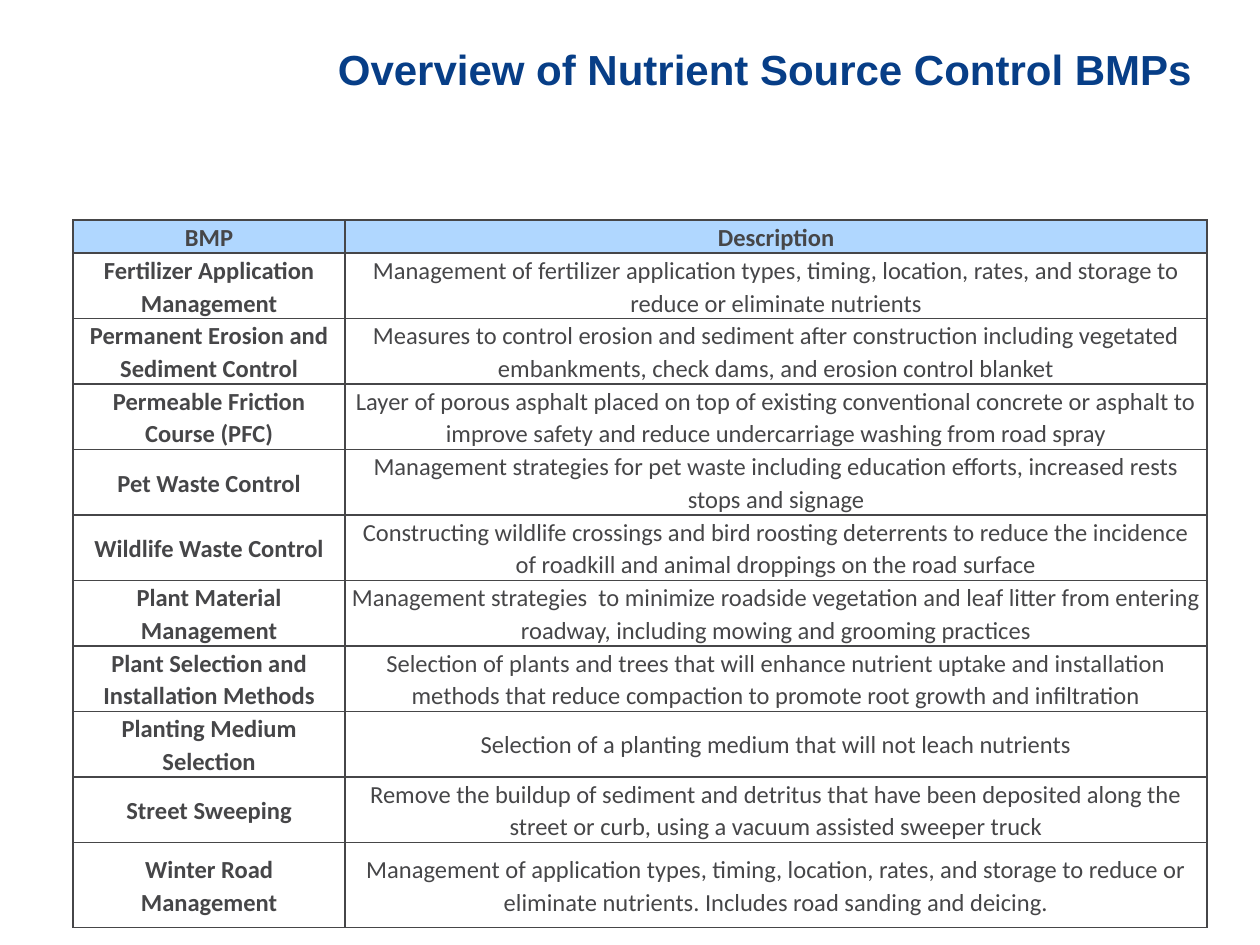
from lxml.etree import SubElement
from pptx import Presentation
from pptx.dml.color import RGBColor as RGB
from pptx.enum.text import MSO_ANCHOR as ANCHOR, PP_ALIGN as ALIGN
from pptx.oxml.ns import qn
from pptx.util import Inches, Pt

COLORS = {"title": "073E87", "text": "464648", "header": "B0D7FF", "border": "464648"}
WIDTH, HEIGHT = Inches(10), Inches(7.5)
INSET = Inches(0.04)
LINE = Inches(0.26)  # height of one line of table text
COLUMN_SHARES = (0.24, 0.76)
HEADER = ("BMP", "Description")
BMPS = [
    ("Fertilizer Application Management",
     "Management of fertilizer application types, timing, location, rates, and storage to "
     "reduce or eliminate nutrients"),
    ("Permanent Erosion and Sediment Control",
     "Measures to control erosion and sediment after construction including vegetated "
     "embankments, check dams, and erosion control blanket"),
    ("Permeable Friction Course (PFC)",
     "Layer of porous asphalt placed on top of existing conventional concrete or asphalt to "
     "improve safety and reduce undercarriage washing from road spray"),
    ("Pet Waste Control",
     "Management strategies for pet waste including education efforts, increased rests "
     "stops and signage"),
    ("Wildlife Waste Control",
     "Constructing wildlife crossings and bird roosting deterrents to reduce the incidence "
     "of roadkill and animal droppings on the road surface"),
    ("Plant Material Management",
     "Management strategies  to minimize roadside vegetation and leaf litter from entering "
     "roadway, including mowing and grooming practices"),
    ("Plant Selection and Installation Methods",
     "Selection of plants and trees that will enhance nutrient uptake and installation "
     "methods that reduce compaction to promote root growth and infiltration"),
    ("Planting Medium Selection",
     "Selection of a planting medium that will not leach nutrients"),
    ("Street Sweeping",
     "Remove the buildup of sediment and detritus that have been deposited along the "
     "street or curb, using a vacuum assisted sweeper truck"),
    ("Winter Road Management",
     "Management of application types, timing, location, rates, and storage to reduce or "
     "eliminate nutrients. Includes road sanding and deicing."),
]


def box(left, top, width, height):
    """Turn shares of the slide's size into lengths."""
    return int(left * WIDTH), int(top * HEIGHT), int(width * WIDTH), int(height * HEIGHT)


def style(p, font, size, color, bold, align):
    p.alignment = align
    p.font.name = font
    p.font.size = Pt(size)
    p.font.bold = bold
    p.font.color.rgb = RGB.from_string(COLORS[color])


def add_title(s, text, area):
    tf = s.shapes.add_textbox(*area).text_frame
    tf.word_wrap = True
    tf.vertical_anchor = ANCHOR.MIDDLE
    tf.margin_left = tf.margin_right = tf.margin_top = tf.margin_bottom = INSET
    p = tf.paragraphs[0]
    p.text = text
    style(p, "Arial", 24, "title", True, ALIGN.RIGHT)


def add_borders(cell):
    """Draw the four sides; must run before the cell gets its fill."""
    tcPr = cell._tc.get_or_add_tcPr()
    for side in ("lnL", "lnR", "lnT", "lnB"):
        ln = SubElement(tcPr, qn(f"a:{side}"), w=str(Pt(1)))
        fill = SubElement(ln, qn("a:solidFill"))
        SubElement(fill, qn("a:srgbClr"), val=COLORS["border"])


def fill_cell(cell, text, bold, header, anchor):
    cell.margin_left = cell.margin_right = INSET
    cell.margin_top = cell.margin_bottom = 0
    cell.vertical_anchor = anchor
    add_borders(cell)
    if header:
        cell.fill.solid()
        cell.fill.fore_color.rgb = RGB.from_string(COLORS["header"])
    else:
        cell.fill.background()
    p = cell.text_frame.paragraphs[0]
    p.text = text
    p.line_spacing = 1.1
    style(p, "Calibri", 14, "text", bold, ALIGN.CENTER)


def add_bmp_table(s, area):
    left, top, width, height = area
    rows = [HEADER] + BMPS
    table = s.shapes.add_table(len(rows), len(HEADER), *area).table
    table.horz_banding = False
    for column, share in zip(table.columns, COLUMN_SHARES):
        column.width = int(share * width)
    heights = [LINE] + [2 * LINE] * (len(BMPS) - 1)
    heights.append(height - sum(heights))
    for i, (texts, row_height) in enumerate(zip(rows, heights)):
        table.rows[i].height = row_height
        anchor = ANCHOR.TOP if texts[0].startswith("Permeable") else ANCHOR.MIDDLE
        for j, text in enumerate(texts):
            fill_cell(table.cell(i, j), text, i == 0 or j == 0, i == 0, anchor)


def main():
    prs = Presentation()
    prs.slide_width, prs.slide_height = WIDTH, HEIGHT
    s = prs.slides.add_slide(prs.slide_layouts[6])
    add_title(s, "Overview of Nutrient Source Control BMPs", box(0.238, 0.01, 0.712, 0.125))
    add_bmp_table(s, box(0.058, 0.233, 0.9, 0.749))
    prs.save("out.pptx")


if __name__ == "__main__":
    main()
